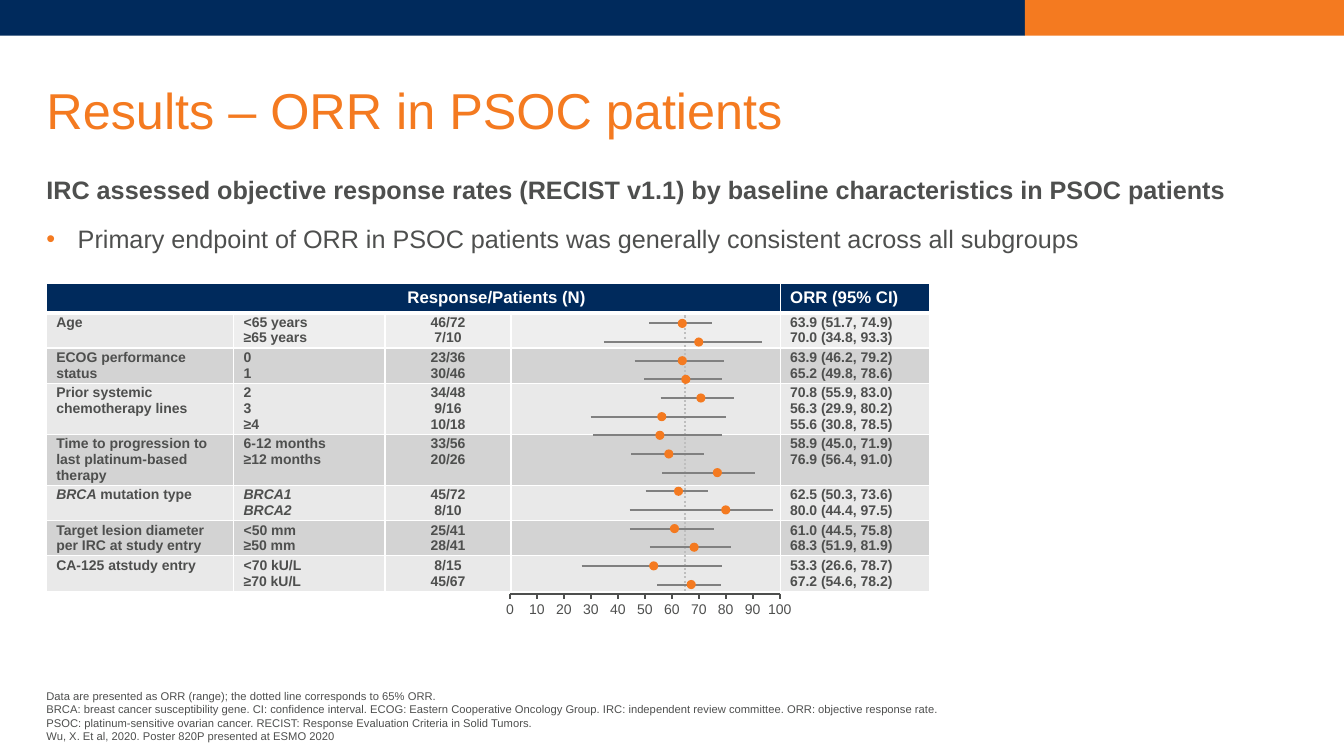
from pptx import Presentation
from pptx.dml.color import RGBColor as Rgb
from pptx.enum.dml import MSO_LINE as Dash
from pptx.enum.shapes import MSO_CONNECTOR as Conn, MSO_SHAPE as Kind
from pptx.enum.text import MSO_ANCHOR as Anchor, PP_ALIGN as Align
from pptx.oxml.ns import qn
from pptx.util import Cm, Pt
from lxml.etree import SubElement

NAVY, ORANGE, INK, WHITE = "002A5C", "F47A20", "4E4F4E", "FFFFFF"
LIGHT, DARK, GREY, DOTS = "E9E9E9", "D3D3D3", "808080", "BEBEBE"

TITLE = "Results – ORR in PSOC patients"
LEAD = "IRC assessed objective response rates (RECIST v1.1) by baseline characteristics in PSOC patients"
POINT = "Primary endpoint of ORR in PSOC patients was generally consistent across all subgroups"
HEADS = ("Response/Patients (N)", "ORR (95% CI)")
GROUPS = [
    ("Age", [
        ("<65 years", "46/72", 63.9, 51.7, 74.9),
        ("≥65 years", "7/10", 70.0, 34.8, 93.3)]),
    ("ECOG performance status", [
        ("0", "23/36", 63.9, 46.2, 79.2),
        ("1", "30/46", 65.2, 49.8, 78.6)]),
    ("Prior systemic chemotherapy lines", [
        ("2", "34/48", 70.8, 55.9, 83.0),
        ("3", "9/16", 56.3, 29.9, 80.2),
        ("≥4", "10/18", 55.6, 30.8, 78.5)]),
    ("Time to progression to last platinum-based therapy", [
        ("6-12 months", "33/56", 58.9, 45.0, 71.9),
        ("≥12 months", "20/26", 76.9, 56.4, 91.0)]),
    ([("BRCA", True), (" mutation type", False)], [
        ([("BRCA1", True)], "45/72", 62.5, 50.3, 73.6),
        ([("BRCA2", True)], "8/10", 80.0, 44.4, 97.5)]),
    ("Target lesion diameter per IRC at study entry", [
        ("<50 mm", "25/41", 61.0, 44.5, 75.8),
        ("≥50 mm", "28/41", 68.3, 51.9, 81.9)]),
    ("CA-125 atstudy entry", [
        ("<70 kU/L", "8/15", 53.3, 26.6, 78.7),
        ("≥70 kU/L", "45/67", 67.2, 54.6, 78.2)]),
]
NOTES = [
    "Data are presented as ORR (range); the dotted line corresponds to 65% ORR.",
    "BRCA: breast cancer susceptibility gene. CI: confidence interval. ECOG: Eastern Cooperative Oncology Group. "
    "IRC: independent review committee. ORR: objective response rate.",
    "PSOC: platinum-sensitive ovarian cancer. RECIST: Response Evaluation Criteria in Solid Tumors.",
    "Wu, X. Et al, 2020. Poster 820P presented at ESMO 2020",
]

WIDTHS = (4.72, 3.81, 3.18, 6.78, 3.76)
TALL = (0.74, 0.89, 0.89, 1.28, 1.28, 0.89, 0.89, 0.89)
LEFT, TOP = 1.17, 7.14
ZERO, SPAN, BASE = 12.85, 6.8, 14.96
FIRST, STEP, DOT = 8.15, 0.47, 0.23

deck = Presentation()
deck.slide_width, deck.slide_height = Cm(33.87), Cm(19.05)
slide = deck.slides.add_slide(deck.slide_layouts[6])
shapes = slide.shapes


def paint(target, hue):
    target.solid()
    target.fore_color.rgb = Rgb.from_string(hue)


def block(kind, x, y, w, h, hue):
    shape = shapes.add_shape(kind, Cm(x), Cm(y), Cm(w), Cm(h))
    shape.shadow.inherit = False
    paint(shape.fill, hue)
    shape.line.fill.background()


def rule(x1, y1, x2, y2, hue, width, dash=None):
    line = shapes.add_connector(Conn.STRAIGHT, Cm(x1), Cm(y1), Cm(x2), Cm(y2))
    SubElement(line._element.spPr, qn("a:effectLst"))
    paint(line.line.fill, hue)
    line.line.width = Pt(width)
    if dash:
        line.line.dash_style = dash


def write(frame, lines, size, hue, bold=False, align=Align.LEFT, lead=None):
    frame.word_wrap = True
    for i, line in enumerate(lines):
        para = frame.add_paragraph() if i else frame.paragraphs[0]
        para.alignment = align
        if lead:
            para.line_spacing = lead
        for text, slant in [(line, False)] if isinstance(line, str) else line:
            run = para.add_run()
            run.text = text
            font = run.font
            font.name, font.size, font.bold, font.italic = "Arial", Pt(size), bold, slant
            font.color.rgb = Rgb.from_string(hue)


def box(x, y, w, h, lines, size, hue, pad=(0, 0, 0, 0), anchor=Anchor.TOP, **look):
    frame = shapes.add_textbox(Cm(x), Cm(y), Cm(w), Cm(h)).text_frame
    frame.margin_left, frame.margin_top, frame.margin_right, frame.margin_bottom = map(Cm, pad)
    frame.vertical_anchor = anchor
    write(frame, lines, size, hue, **look)
    return frame


def edge(cell, hue, top=1, base=1):
    props = cell._tc.get_or_add_tcPr()
    sides = (("L", 1), ("R", 1), ("T", top), ("B", base))
    for i, (side, width) in enumerate(sides):
        line = SubElement(props, qn("a:ln" + side), w=str(Pt(width)))
        SubElement(SubElement(line, qn("a:solidFill")), qn("a:srgbClr"), val=hue)
        props.insert(i, line)


def dress(cell, lines, hue, align=Align.LEFT, top=1):
    cell.margin_left = cell.margin_right = Cm(0.25)
    cell.margin_top = cell.margin_bottom = Cm(0.05)
    paint(cell.fill, hue)
    edge(cell, WHITE, top)
    write(cell.text_frame, lines, 10, INK, True, align)
    if not lines:
        SubElement(cell.text_frame.paragraphs[0]._p, qn("a:endParaRPr"), sz="1000")


def place(value):
    return ZERO + SPAN * value / 100


block(Kind.RECTANGLE, 0, 0, 25.83, 0.9, NAVY)
block(Kind.RECTANGLE, 25.83, 0, 8.04, 0.9, ORANGE)

grid = shapes.add_table(len(TALL), len(WIDTHS), Cm(LEFT), Cm(TOP), Cm(sum(WIDTHS)), Cm(sum(TALL))).table
for col, width in zip(grid.columns, WIDTHS):
    col.width = Cm(width)
for row, height in zip(grid.rows, TALL):
    row.height = Cm(height)
for c in range(5):
    head = grid.cell(0, c)
    paint(head.fill, NAVY)
    edge(head, WHITE, base=3)
    head.vertical_anchor = Anchor.MIDDLE
grid.cell(0, 0).merge(grid.cell(0, 3))
grid.cell(0, 0).margin_right = Cm(4.9)
for c, text, align in zip((0, 4), HEADS, (Align.RIGHT, Align.LEFT)):
    write(grid.cell(0, c).text_frame, [text], 12, WHITE, True, align)

for r, (name, items) in enumerate(GROUPS, 1):
    labels, counts, *_ = zip(*items)
    rates = [f"{rate:.1f} ({low:.1f}, {high:.1f})" for _, _, rate, low, high in items]
    for c, lines in enumerate(([name], labels, counts, [], rates)):
        cell = grid.cell(r, c)
        dress(cell, lines, LIGHT if r % 2 else DARK, Align.CENTER if c == 2 else Align.LEFT, 3 if r == 1 else 1)
        if r == 1 and c:
            tint = cell._tc.tcPr.find(qn("a:solidFill")).find(qn("a:srgbClr"))
            SubElement(tint, qn("a:alpha"), val="73000")

rule(place(65), 7.95, place(65), BASE, DOTS, 1.5, Dash.ROUND_DOT)

box(LEFT, 1.02, 31.57, 3.68, [TITLE], 36, ORANGE, anchor=Anchor.MIDDLE, lead=0.9)
box(LEFT, 17.7, 23.67, 1.02, NOTES, 8, INK, anchor=Anchor.BOTTOM)
PAD = (0, 0.13, 0.25, 0.13)
box(LEFT, 4.34, 31.57, 0.94, [LEAD], 18, INK, PAD, bold=True, lead=0.9)
point = box(LEFT, 5.51, 31.57, 1.02, [POINT], 18, INK, PAD)
props = point.paragraphs[0]._p.get_or_add_pPr()
props.set("marL", str(Cm(0.79)))
props.set("indent", str(-Cm(0.79)))
SubElement(SubElement(props, qn("a:buClr")), qn("a:srgbClr"), val=ORANGE)
SubElement(props, qn("a:buFont"), typeface="Arial")
SubElement(props, qn("a:buChar"), char="•")

trials = [item for _, items in GROUPS for item in items]
for i, (_, _, rate, low, high) in enumerate(trials):
    y = FIRST + STEP * i
    rule(place(low), y, place(high), y, GREY, 1.5)
    block(Kind.OVAL, place(rate) - DOT / 2, y - DOT / 2, DOT, DOT, ORANGE)

rule(ZERO, BASE, ZERO + SPAN, BASE, INK, 1.25)
for mark in range(0, 101, 10):
    x = place(mark)
    rule(x, BASE, x, BASE + 0.13, INK, 1.25)
    box(x - 0.4, 15.01, 0.8, 0.69, [str(mark)], 10, INK, (0, 0.13, 0, 0.13), align=Align.CENTER)

deck.save("out.pptx")
